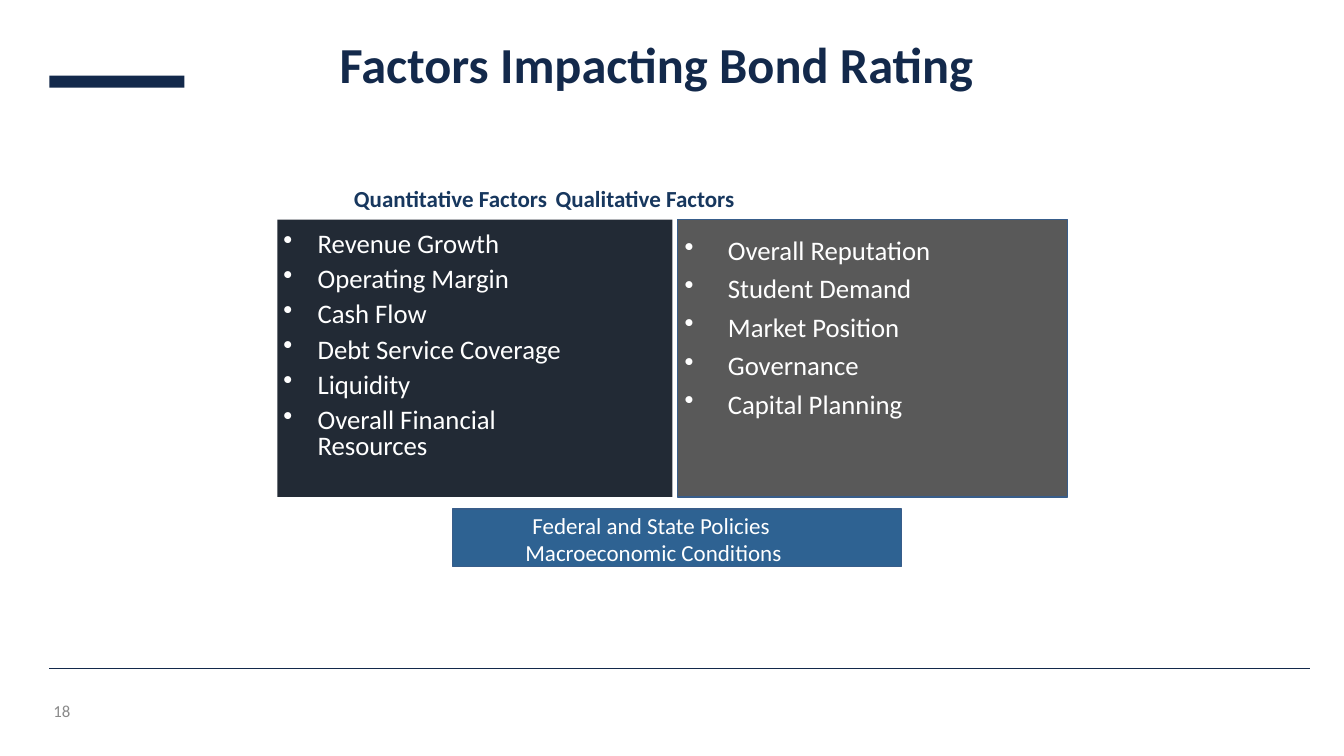
from dataclasses import dataclass

from lxml import etree
from pptx import Presentation
from pptx.dml.color import RGBColor
from pptx.enum.shapes import MSO_CONNECTOR, MSO_SHAPE
from pptx.enum.text import MSO_ANCHOR
from pptx.oxml.ns import qn
from pptx.util import Inches, Pt

RECTANGLE = MSO_SHAPE.RECTANGLE
STRAIGHT = MSO_CONNECTOR.STRAIGHT
TOP, MIDDLE = MSO_ANCHOR.TOP, MSO_ANCHOR.MIDDLE


@dataclass(frozen=True)
class Theme:
    """Colours, font and type sizes of the slide."""
    font: str = "Calibri"
    navy: str = "13294B"
    heading: str = "17375E"
    dark: str = "222A35"
    gray: str = "595959"
    blue: str = "2E6292"
    outline: str = "385D8A"
    white: str = "FFFFFF"
    muted: str = "8A8A8A"
    title_size: float = 36
    list_size: float = 19.1
    label_size: float = 16.4
    number_size: float = 12


THEME = Theme()
QUANTITATIVE = ["Revenue Growth", "Operating Margin", "Cash Flow",
                "Debt Service Coverage", "Liquidity",
                "Overall Financial\vResources"]
QUALITATIVE = ["Overall Reputation", "Student Demand", "Market Position",
               "Governance", "Capital Planning"]


def add_block(slide, box, fill, outline=None):
    """Add a filled rectangle with an optional outline."""
    shape = slide.shapes.add_shape(RECTANGLE, *map(Inches, box))
    shape.shadow.inherit = False
    shape.fill.solid()
    shape.fill.fore_color.rgb = RGBColor.from_string(fill)
    if outline:
        shape.line.color.rgb = RGBColor.from_string(outline)
        shape.line.width = Pt(0.96)
    else:
        shape.line.fill.background()
    return shape


def add_rule(slide, left, right, top):
    """Add a thin horizontal line."""
    line = slide.shapes.add_connector(
        STRAIGHT, Inches(left), Inches(top), Inches(right), Inches(top))
    line.line.color.rgb = RGBColor.from_string(THEME.navy)
    line.line.width = Pt(0.5)
    etree.SubElement(line._element.spPr, qn("a:effectLst"))


def set_frame(shape, insets=(0, 0, 0, 0), anchor=TOP):
    """Set wrapping, insets and anchor, and return the text frame."""
    frame = shape.text_frame
    frame.word_wrap = True
    frame.vertical_anchor = anchor
    (frame.margin_left, frame.margin_top,
     frame.margin_right, frame.margin_bottom) = map(Inches, insets)
    return frame


def add_text_box(slide, box, insets=(0, 0, 0, 0), anchor=TOP):
    """Add a text box and return its text frame."""
    return set_frame(slide.shapes.add_textbox(*map(Inches, box)), insets, anchor)


def write(paragraph, text, size, color, bold=False, before=0, spacing=None):
    """Write a left-aligned paragraph in the theme font."""
    paragraph.text = text
    paragraph.alignment = 1
    paragraph.space_before = Pt(before)
    if spacing:
        paragraph.line_spacing = spacing
    for run in paragraph.runs:
        run.font.name = THEME.font
        run.font.size = Pt(size)
        run.font.bold = bold
        run.font.color.rgb = RGBColor.from_string(color)


def set_indent(paragraph, margin, first=0):
    """Set the left margin and first-line indent in inches."""
    properties = paragraph._p.get_or_add_pPr()
    properties.set("marL", str(Inches(margin)))
    properties.set("indent", str(Inches(first)))
    return properties


def add_tab_stop(paragraph, position):
    """Add a left tab stop in inches."""
    tabs = etree.SubElement(paragraph._p.get_or_add_pPr(), qn("a:tabLst"))
    etree.SubElement(tabs, qn("a:tab"), pos=str(Inches(position)), algn="l")


def add_bullets(slide, box, inset, items, indent, first_gap, gap):
    """Add a bulleted list; an item of two lines is set tighter."""
    frame = add_text_box(slide, box, (0, inset, 0, 0))
    for index, item in enumerate(items):
        paragraph = frame.add_paragraph() if index else frame.paragraphs[0]
        broken = "\v" in item
        before = 6.8 if broken else gap if index else first_gap
        write(paragraph, item, THEME.list_size, THEME.white,
              before=before, spacing=0.8 if broken else None)
        properties = set_indent(paragraph, indent, -indent)
        etree.SubElement(properties, qn("a:buChar"), char="•")


def add_title(slide):
    """Add the accent bar and the title."""
    add_block(slide, (0.49, 0.75, 1.34, 0.12), THEME.navy)
    frame = add_text_box(slide, (3.27, 0.35, 7.32, 0.85), (0.1, 0.05, 0.1, 0.05))
    write(frame.paragraphs[0], "Factors Impacting Bond Rating",
          THEME.title_size, THEME.navy, bold=True, spacing=0.9)


def add_factors(slide):
    """Add the headings and the two panels of factors."""
    heading = add_text_box(slide, (3.5, 1.82, 6.25, 0.28),
                           (0, 0.01, 0, 0)).paragraphs[0]
    write(heading, "Quantitative Factors\tQualitative Factors",
          THEME.label_size, THEME.heading, bold=True, before=0.7)
    set_indent(heading, 0.01)
    add_tab_stop(heading, 3.96)
    add_block(slide, (2.75, 2.18, 3.92, 2.75), THEME.dark)
    add_bullets(slide, (2.81, 2.21, 3.22, 2.37), 0.04, QUANTITATIVE, 0.34, 3, 2.2)
    add_block(slide, (6.72, 2.18, 3.87, 2.75), THEME.gray, THEME.outline)
    add_bullets(slide, (6.79, 2.25, 2.87, 1.96), 0.07, QUALITATIVE, 0.43, 5.2, 4.5)


def add_banner(slide):
    """Add the banner of external conditions."""
    banner = add_block(slide, (4.49, 5.05, 4.45, 0.57), THEME.blue, THEME.outline)
    paragraph = set_frame(banner, (0, 0.02, 0, 0)).paragraphs[0]
    write(paragraph, "Federal and State Policies\vMacroeconomic Conditions",
          THEME.label_size, THEME.white, before=1.7)
    set_indent(paragraph, 0.72, 0.07)


def add_footer(slide):
    """Add the footer line and the slide number."""
    add_rule(slide, 0.49, 12.99, 6.63)
    number = add_text_box(slide, (0.49, 6.87, 3, 0.4), anchor=MIDDLE).paragraphs[0]
    write(number, "18", THEME.number_size, THEME.muted, spacing=Pt(12.4))
    set_indent(number, 0.04)


def main():
    """Build and save the slide."""
    presentation = Presentation()
    presentation.slide_width = Inches(13.33)
    presentation.slide_height = Inches(7.5)
    slide = presentation.slides.add_slide(presentation.slide_layouts[6])
    add_title(slide)
    add_factors(slide)
    add_banner(slide)
    add_footer(slide)
    presentation.save("out.pptx")


if __name__ == "__main__":
    main()
